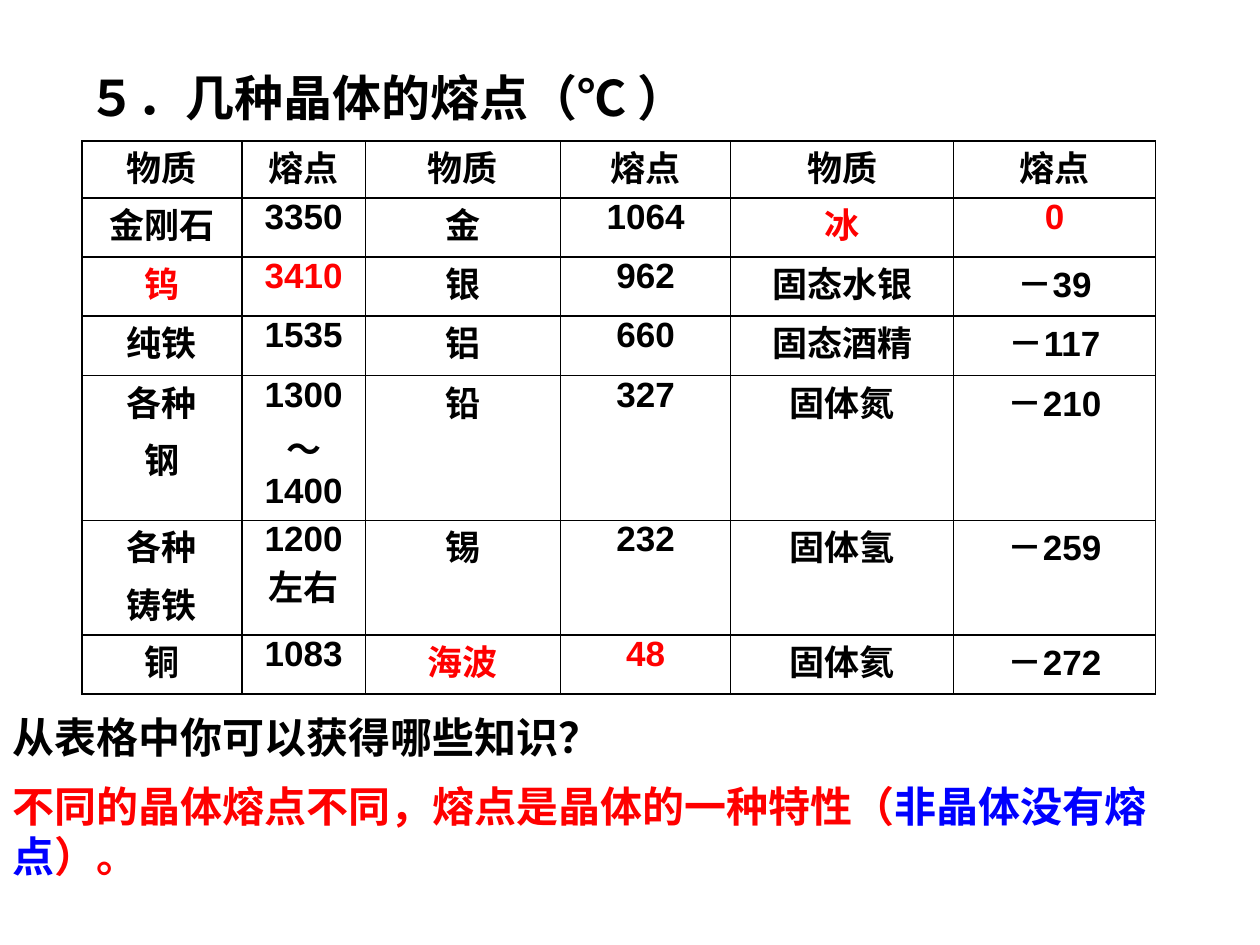
from lxml.etree import SubElement
from pptx import Presentation
from pptx.dml.color import RGBColor
from pptx.enum.text import MSO_ANCHOR, PP_ALIGN
from pptx.oxml.ns import qn
from pptx.util import Inches, Pt

THEME = {
    "black": "000000", "red": "FF0000", "blue": "0000FF",
    "latin": "Arial", "chinese": "Noto Sans CJK SC",
    "title": 28, "body": 24, "cell": 20, "leading": 1.19, "border": 1,
}

MELTING_POINTS = [
    ["物质", "熔点", "物质", "熔点", "物质", "熔点"],
    ["金刚石", "3350", "金", "1064", "冰", "0"],
    ["钨", "3410", "银", "962", "固态水银", "－39"],
    ["纯铁", "1535", "铝", "660", "固态酒精", "－117"],
    ["各种\n钢", "1300\n～1400", "铅", "327", "固体氮", "－210"],
    ["各种\n铸铁", "1200左右", "锡", "232", "固体氢", "－259"],
    ["铜", "1083", "海波", "48", "固体氦", "－272"],
]
HIGHLIGHTED = {"冰", "0", "钨", "3410", "海波", "48"}
COLUMN_WIDTHS = [1.27, 0.98, 1.55, 1.35, 1.77, 1.6]
ROW_HEIGHTS = [0.45, 0.47, 0.47, 0.47, 1.15, 0.91, 0.47, 0.2]

PASSAGES = [
    ((0.6, 0.45, 5.9, 0.57), "title", [("５．几种晶体的熔点（℃ ）", "black")]),
    ((0, 5.56, 6.53, 0.5), "body", [("从表格中你可以获得哪些知识？", "black")]),
    ((0, 6.11, 9.57, 0.91), "body", [
        ("不同的晶体熔点不同，熔点是晶体的一种特性（", "red"),
        ("非晶体没有熔点", "blue"),
        ("）。", "red"),
    ]),
]


def add_run(paragraph, words, size, color, latin):
    run = paragraph.add_run()
    run.text = words
    run.font.size = Pt(THEME[size])
    run.font.bold = True
    run.font.name = THEME[latin]
    run.font.color.rgb = RGBColor.from_string(THEME[color])
    SubElement(run.font._element, qn("a:ea"), typeface=THEME["chinese"])


def add_passage(slide, place, size, runs):
    passage = slide.shapes.add_textbox(*map(Inches, place)).text_frame
    passage.word_wrap = True
    passage.margin_top, passage.margin_bottom = Inches(0.09), 0
    paragraph = passage.paragraphs[0]
    paragraph.line_spacing = Pt(THEME[size] * THEME["leading"])
    for words, color in runs:
        add_run(paragraph, words, size, color, "chinese")


def set_borders(cell, sides):
    properties = cell._tc.get_or_add_tcPr()
    for side in ("lnL", "lnR", "lnT", "lnB"):
        border = SubElement(properties, qn(f"a:{side}"), w=str(Pt(THEME["border"])))
        if side in sides:
            fill = SubElement(border, qn("a:solidFill"))
            SubElement(fill, qn("a:srgbClr"), val=THEME["black"])
        else:
            SubElement(border, qn("a:noFill"))


def fill_cell(cell, words):
    cell.vertical_anchor = MSO_ANCHOR.TOP
    color = "red" if words in HIGHLIGHTED else "black"
    for index, line in enumerate(words.split("\n")):
        frame = cell.text_frame
        paragraph = frame.add_paragraph() if index else frame.paragraphs[0]
        paragraph.alignment = PP_ALIGN.CENTER
        paragraph.space_before = Pt(THEME["cell"] * 0.2)
        add_run(paragraph, line, "cell", color, "latin")


def add_melting_points(slide):
    table = slide.shapes.add_table(
        len(ROW_HEIGHTS), len(COLUMN_WIDTHS), Inches(0.65), Inches(1.12),
        Inches(sum(COLUMN_WIDTHS)), Inches(sum(ROW_HEIGHTS))).table
    table.first_row = table.horz_banding = False
    for column, width in zip(table.columns, COLUMN_WIDTHS):
        column.width = Inches(width)
    for row, height in zip(table.rows, ROW_HEIGHTS):
        row.height = Inches(height)
        for cell in row.cells:
            cell.margin_top = cell.margin_bottom = 0
    for row, substances in zip(table.rows, MELTING_POINTS):
        for cell, words in zip(row.cells, substances):
            fill_cell(cell, words)
            set_borders(cell, ("lnL", "lnR", "lnT", "lnB"))
            cell.fill.background()
    footer = len(MELTING_POINTS)
    for cell in table.rows[footer].cells:
        set_borders(cell, ("lnT",))
        cell.fill.background()
    table.cell(footer, 0).merge(table.cell(footer, len(COLUMN_WIDTHS) - 1))


def main():
    """Build the slide on the melting points of crystals."""
    presentation = Presentation()
    presentation.slide_width, presentation.slide_height = Inches(10), Inches(7.5)
    slide = presentation.slides.add_slide(presentation.slide_layouts[6])
    add_melting_points(slide)
    for place, size, runs in PASSAGES:
        add_passage(slide, place, size, runs)
    presentation.save("out.pptx")


if __name__ == "__main__":
    main()
